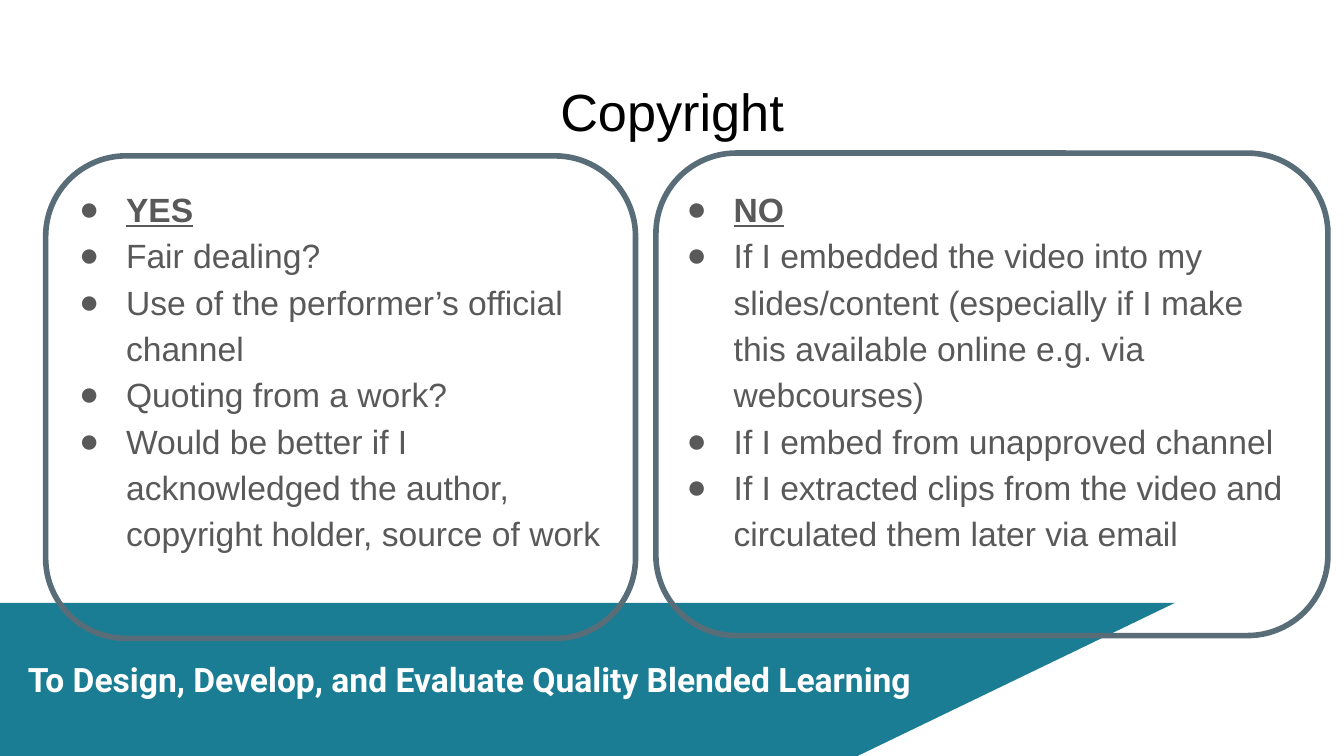
from lxml import etree
from pptx import Presentation
from pptx.dml.color import RGBColor
from pptx.enum.shapes import MSO_SHAPE
from pptx.enum.text import MSO_ANCHOR, MSO_AUTO_SIZE, PP_ALIGN
from pptx.oxml.ns import qn
from pptx.util import Pt

RECTANGLE = MSO_SHAPE.RECTANGLE
TRIANGLE = MSO_SHAPE.RIGHT_TRIANGLE
ROUNDED = MSO_SHAPE.ROUNDED_RECTANGLE
TOP = MSO_ANCHOR.TOP
NO_AUTOFIT = MSO_AUTO_SIZE.NONE
CENTER, LEFT = PP_ALIGN.CENTER, PP_ALIGN.LEFT

TITLE = "Copyright"
FOOTER = "To Design, Develop, and Evaluate Quality Blended Learning"
COLUMNS = [
    {
        "heading": "YES",
        "points": [
            "Fair dealing?",
            "Use of the performer’s official channel",
            "Quoting from a work?",
            "Would be better if I acknowledged the author, copyright holder, source of work",
        ],
        "text_box": (24.5, 90.7, 314.6, 269.3),
        "outline": (24.5, 83.5, 316, 258.5),
    },
    {
        "heading": "NO",
        "points": [
            "If I embedded the video into my slides/content (especially if I make this available online e.g. via webcourses)",
            "If I embed from unapproved channel",
            "If I extracted clips from the video and circulated them later via email",
        ],
        "text_box": (350, 90.7, 345.6, 269.3),
        "outline": (351.4, 82, 360, 258.5),
    },
]

THEME = {
    "white": RGBColor.from_string("FFFFFF"),
    "teal": RGBColor.from_string("1A7D94"),
    "slate": RGBColor.from_string("586D77"),
    "title": {"name": "Arial", "size": Pt(28), "bold": False, "color": RGBColor.from_string("000000")},
    "body": {"name": "Arial", "size": Pt(18), "bold": False, "color": RGBColor.from_string("595959")},
    "heading": {"name": "Arial", "size": Pt(18), "bold": True, "underline": True, "color": RGBColor.from_string("595959")},
    "footer": {"name": "Roboto", "size": Pt(18), "bold": True, "color": RGBColor.from_string("FFFFFF")},
}
WIDTH, HEIGHT = 720, 405
INSET = 7.2
BAND_TOP = 323
INDENT, HANGING = 36, 25.2


def place(shape, box):
    for name, value in zip(("left", "top", "width", "height"), box):
        setattr(shape, name, Pt(value))


def prepare_frame(shape):
    frame = shape.text_frame
    settings = {"word_wrap": True, "auto_size": NO_AUTOFIT, "vertical_anchor": TOP}
    settings.update({f"margin_{side}": Pt(INSET) for side in ("left", "top", "right", "bottom")})
    for name, value in settings.items():
        setattr(frame, name, value)
    return frame


def write(paragraph, text, style, alignment=LEFT):
    paragraph.alignment = alignment
    run = paragraph.add_run()
    run.text = text
    for name, value in style.items():
        if name == "color":
            run.font.color.rgb = value
        else:
            setattr(run.font, name, value)


def add_bullet(paragraph, color):
    properties = paragraph._p.get_or_add_pPr()
    properties.set("marL", str(Pt(INDENT)))
    properties.set("indent", str(-Pt(HANGING)))
    bullet_color = etree.SubElement(properties, qn("a:buClr"))
    etree.SubElement(bullet_color, qn("a:srgbClr"), val=str(color))
    etree.SubElement(properties, qn("a:buFont"), typeface="Arial")
    etree.SubElement(properties, qn("a:buChar"), char="●")


def add_column(slide, column):
    frame = prepare_frame(slide.shapes.add_textbox(*map(Pt, column["text_box"])))
    for index, text in enumerate([column["heading"], *column["points"]]):
        paragraph = frame.add_paragraph() if index else frame.paragraphs[0]
        add_bullet(paragraph, THEME["body"]["color"])
        paragraph.line_spacing = 1.15
        write(paragraph, text, THEME["body" if index else "heading"])


def add_plain_shape(slide, kind, box, fill=None, line=None):
    shape = slide.shapes.add_shape(kind, *map(Pt, box))
    shape.shadow.inherit = False
    if fill is None:
        shape.fill.background()
    else:
        shape.fill.solid()
        shape.fill.fore_color.rgb = fill
    if line is None:
        shape.line.fill.background()
    else:
        shape.line.color.rgb = line
        shape.line.width = Pt(3)
    return shape


def main():
    presentation = Presentation()
    presentation.slide_width, presentation.slide_height = Pt(WIDTH), Pt(HEIGHT)
    slide = presentation.slides.add_slide(presentation.slide_layouts[5])
    slide.background.fill.solid()
    slide.background.fill.fore_color.rgb = THEME["white"]

    title = slide.shapes.title
    place(title, (24.5, 35.3, WIDTH - 2 * 24.5, 45.4))
    write(prepare_frame(title).paragraphs[0], TITLE, THEME["title"], CENTER)

    for column in COLUMNS:
        add_column(slide, column)

    add_plain_shape(slide, RECTANGLE, (0, BAND_TOP, WIDTH, HEIGHT - BAND_TOP), fill=THEME["teal"])
    corner = add_plain_shape(slide, TRIANGLE, (451.4, 279.4, WIDTH - 451.4, 129.6), fill=THEME["white"])
    corner._element.spPr.xfrm.set("flipH", "1")

    footer = slide.shapes.add_textbox(*map(Pt, (7.9, 345.6, 532, 36.7)))
    write(prepare_frame(footer).paragraphs[0], FOOTER, THEME["footer"])

    for column in COLUMNS:
        add_plain_shape(slide, ROUNDED, column["outline"], line=THEME["slate"])

    presentation.save("out.pptx")


if __name__ == "__main__":
    main()
